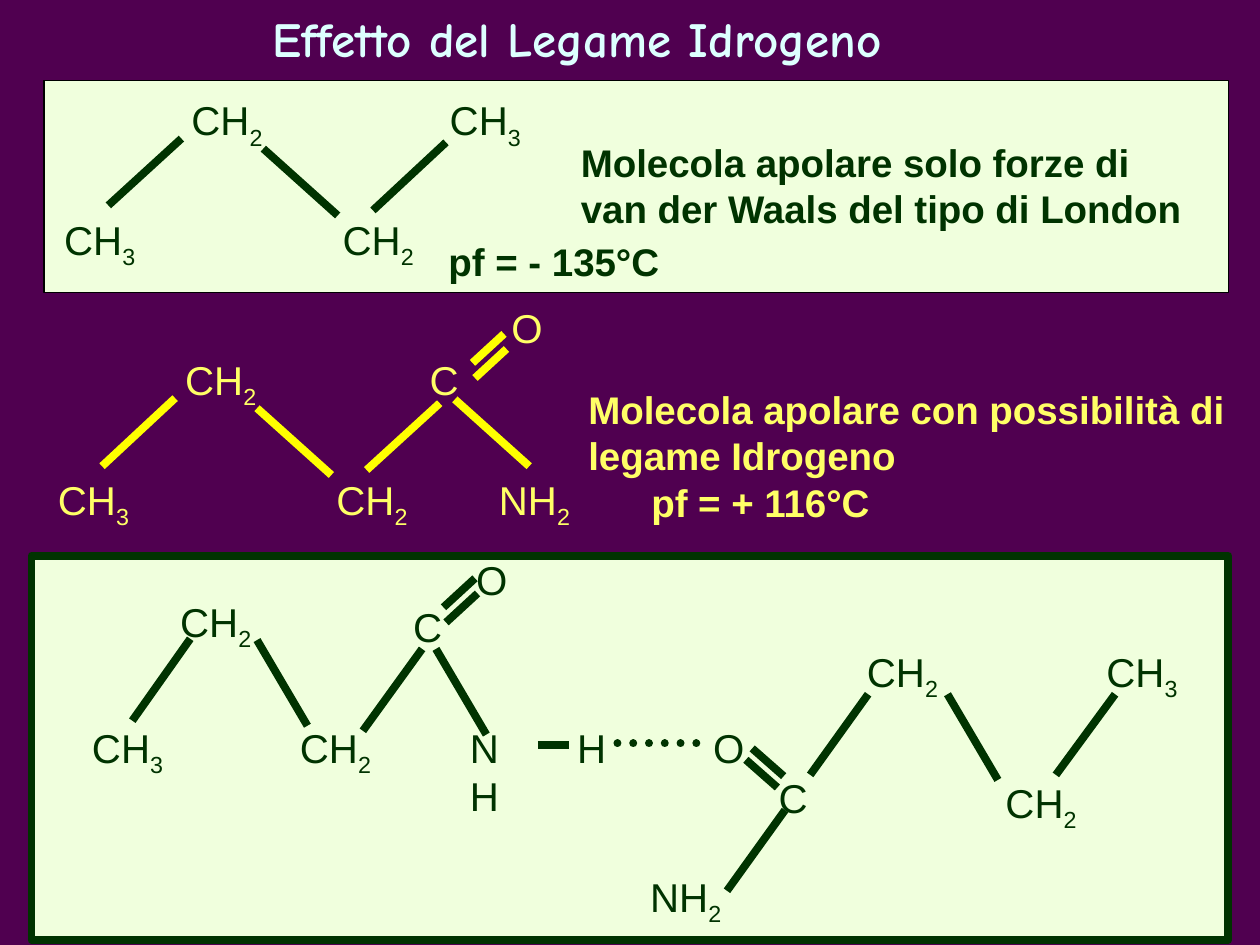
from pptx import Presentation
from pptx.dml.color import RGBColor
from pptx.enum.dml import MSO_LINE
from pptx.enum.shapes import MSO_CONNECTOR, MSO_SHAPE
from pptx.util import Inches, Pt
from lxml import etree

PURPLE = RGBColor(0x50, 0x00, 0x50)
MINT = RGBColor(0xF0, 0xFF, 0xDD)
GREEN = RGBColor(0x00, 0x33, 0x00)
BLACK = RGBColor(0x00, 0x00, 0x00)
YELLOW = RGBColor(0xFF, 0xFF, 0x00)
PALE_YELLOW = RGBColor(0xFF, 0xFF, 0x66)
PALE_CYAN = RGBColor(0xDD, 0xFF, 0xFF)
A_NS = "http://schemas.openxmlformats.org/drawingml/2006/main"

prs = Presentation()
prs.slide_width, prs.slide_height = Inches(10), Inches(7.5)
s = prs.slides.add_slide(prs.slide_layouts[6])
s.background.fill.solid()
s.background.fill.fore_color.rgb = PURPLE


def add_text(text, x, y, w, h, color, size=23, font="Arial", bold=False, wrap=False):
    tf = s.shapes.add_textbox(Inches(x), Inches(y), Inches(w), Inches(h)).text_frame
    tf.word_wrap = wrap
    tf.margin_left = tf.margin_right = Inches(0.06)
    tf.margin_top = tf.margin_bottom = Inches(0.03)
    tf.text = text
    for p in tf.paragraphs:
        for r in p.runs:
            r.font.size, r.font.name, r.font.bold = Pt(size), font, bold
            r.font.color.rgb = color
    return tf


def add_bond(x1, y1, x2, y2, color):
    c = s.shapes.add_connector(
        MSO_CONNECTOR.STRAIGHT, Inches(x1), Inches(y1), Inches(x2), Inches(y2))
    c.line.color.rgb, c.line.width = color, Pt(4.5)
    etree.SubElement(c._element.spPr, f"{{{A_NS}}}effectLst")
    return c


panels = [
    (0.25, 4.41, 9.5, 3.05, GREEN, 4.5),
    (0.35, 0.64, 9.4, 1.68, BLACK, 0.75),
]
for x, y, w, h, color, weight in panels:
    sp = s.shapes.add_shape(MSO_SHAPE.RECTANGLE, Inches(x), Inches(y), Inches(w), Inches(h))
    sp.shadow.inherit = False
    sp.fill.solid()
    sp.fill.fore_color.rgb = MINT
    sp.line.color.rgb, sp.line.width = color, Pt(weight)

butane_atoms = [("CH3", 0.45, 1.68), ("CH2", 1.46, 0.73), ("CH2", 2.66, 1.68), ("CH3", 3.51, 0.73)]
butane_bonds = [(0.86, 1.63, 1.44, 1.1), (2.96, 1.67, 3.54, 1.13), (2.68, 1.71, 2.09, 1.18)]

amide_atoms = [
    ("CH3", 0.4, 3.74), ("CH2", 1.41, 2.79), ("CH2", 2.61, 3.74),
    ("C", 3.35, 2.79), ("O", 4, 2.38), ("NH2", 3.9, 3.74),
]
amide_bonds = [
    (0.81, 3.7, 1.39, 3.16), (2.91, 3.73, 3.49, 3.2), (2.63, 3.77, 2.04, 3.24),
    (3.75, 2.88, 4, 2.65), (3.77, 3, 4.02, 2.77), (4.2, 3.7, 3.61, 3.17),
]

dimer_atoms = [
    ("CH3", 0.67, 5.71), ("CH2", 1.37, 4.71), ("CH2", 2.32, 5.71), ("C", 3.22, 4.75),
    ("O", 3.72, 4.38), ("H", 4.52, 5.71), ("O", 5.6, 5.71), ("C", 6.12, 6.11),
    ("NH2", 5.1, 6.89), ("CH2", 6.82, 5.11), ("CH2", 7.92, 6.15), ("CH3", 8.72, 5.11),
]
dimer_bonds = [
    (1.05, 5.72, 1.51, 5.07), (2.44, 5.76, 2.04, 5.08), (3.52, 4.82, 3.77, 4.59),
    (3.54, 4.94, 3.79, 4.71), (2.88, 5.8, 3.35, 5.15), (3.86, 5.83, 3.46, 5.15),
    (4.27, 5.91, 4.52, 5.91), (6.22, 6.16, 5.97, 5.94), (6.17, 6.25, 5.92, 6.03),
    (5.77, 7.07, 6.23, 6.43), (6.43, 6.15, 6.89, 5.51), (7.92, 6.19, 7.52, 5.51),
    (8.38, 6.15, 8.85, 5.51),
]

molecules = [
    (butane_atoms, butane_bonds, GREEN, GREEN, 0.73, 0.42),
    (amide_atoms, amide_bonds, PALE_YELLOW, YELLOW, 0.73, 0.42),
    (dimer_atoms, dimer_bonds, GREEN, GREEN, 0.69, 0.44),
]
for atoms, bonds, atom_color, bond_color, w, h in molecules:
    for formula, x, y in atoms:
        symbol = formula.rstrip("23")
        count = formula[len(symbol):]
        tf = add_text(symbol, x, y, w if count else 0.36, h, atom_color)
        if count:
            r = tf.paragraphs[0].add_run()
            r.text = count
            r.font.size, r.font.name = Pt(23), "Arial"
            r.font.color.rgb = atom_color
            r.font._element.set("baseline", "-25000")
    for bond in bonds:
        add_bond(*bond, bond_color)

add_text("NH", 3.67, 5.71, 0.4, 0.82, GREEN, wrap=True)
hydrogen_bond = add_bond(4.9, 5.9, 5.6, 5.9, GREEN)
hydrogen_bond.line.dash_style = MSO_LINE.ROUND_DOT
hydrogen_bond.line._ln.set("cap", "rnd")

captions = [
    ("Molecola apolare solo forze di\nvan der Waals del tipo di London", 4.55, 1.07, 4.91, 0.79, GREEN),
    ("pf = - 135°C", 3.5, 1.86, 1.86, 0.4, GREEN),
    ("Molecola apolare con possibilità di\nlegame Idrogeno", 4.61, 3.03, 5.27, 0.79, PALE_YELLOW),
    ("pf = + 116°C", 5.11, 3.77, 1.94, 0.4, PALE_YELLOW),
]
for caption in captions:
    add_text(*caption, size=22, bold=True)

add_text("Effetto del Legame Idrogeno", 2.1, 0.04, 5.81, 0.49, PALE_CYAN,
         size=28, font="Comic Neue", bold=True, wrap=True)

prs.save("out.pptx")
